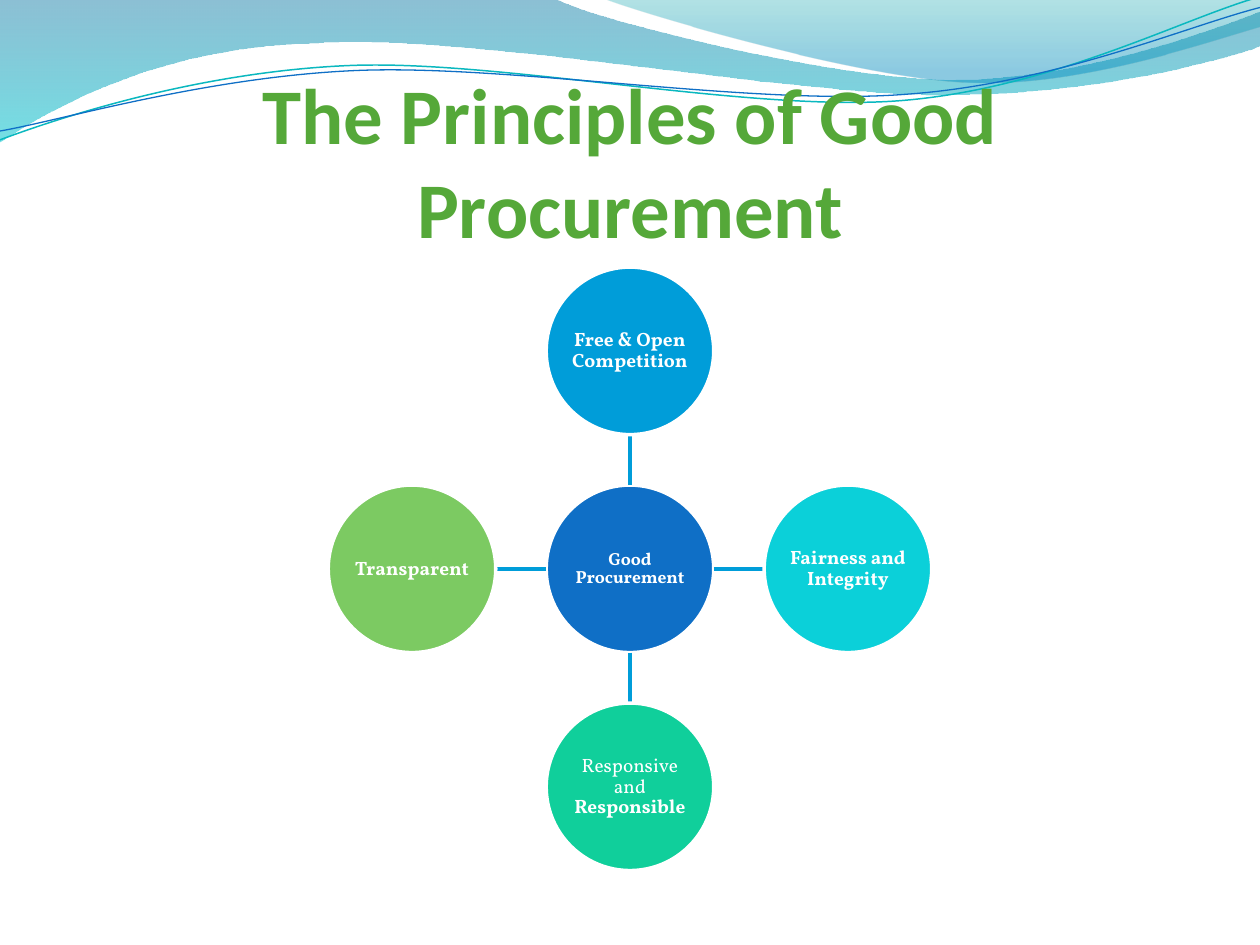
from dataclasses import dataclass
from itertools import islice
from math import cos, radians, sin
from typing import Optional

from lxml.etree import SubElement
from pptx import Presentation
from pptx.dml.color import RGBColor
from pptx.enum.shapes import MSO_CONNECTOR, MSO_SHAPE
from pptx.enum.text import MSO_ANCHOR, PP_ALIGN
from pptx.oxml.ns import qn
from pptx.util import Inches, Pt


@dataclass(frozen=True)
class Theme:
    title: str = "55A839"
    white: str = "FFFFFF"
    hub: str = "0F6FC6"
    spoke: str = "009DD9"
    head: str = "Calibri"
    body: str = "Vollkorn"
    big: float = 45
    small: float = 10
    label: float = 11


@dataclass(frozen=True)
class Stop:
    place: float
    color: str
    alpha: int


@dataclass(frozen=True)
class Wave:
    start: tuple[float, float]
    steps: list[tuple[float, ...]]
    stops: tuple[Stop, ...] = ()
    line: Optional[str] = None
    width: float = 0
    pivot: tuple[float, float] = (0, 0)
    turn: float = 0


@dataclass(frozen=True)
class Run:
    text: str
    bold: bool = True


@dataclass(frozen=True)
class Node:
    dx: int
    dy: int
    color: str
    runs: tuple[Run, ...]
    size: float = Theme.label


THEME = Theme()
SIZE = 1.33
MID = (5, 3.85 + SIZE / 2)
PITCH = 1.73
TILT = -2.7

WAVES = [
    Wave((0, 0), [
        (4.4, -0.01), (4.76, 0.17, 6.64, 0.63, 7.58, 0.63),
        (8.53, 0.63, 9.58, 0.26, 10, 0.09), (10.01, 0.36),
        (9.83, 0.44, 8.7, 0.76, 7.46, 0.75),
        (6.22, 0.75, 3.82, 0.28, 2.57, 0.34),
        (1.29, 0.36, 0.46, 0.83, -0.01, 1.13),
    ], (Stop(0, "0074A1", 45), Stop(1, "00C6CF", 55))),
    Wave((4.79, -0.01), [
        (5.09, 0.11, 6.82, 0.62, 7.69, 0.65),
        (8.56, 0.69, 9.61, 0.32, 10, 0.21), (10, 0),
    ], (Stop(0, "00A1A9", 30), Stop(0.8, "008BBF", 45))),
    Wave((0, 1.11), [
        (0.48, 0.93, 1.58, 0.57, 2.77, 0.52),
        (3.95, 0.47, 5.93, 0.89, 7.13, 0.8),
        (8.33, 0.71, 9.38, 0.15, 9.98, -0.02),
    ], line="0AB8BF", width=0.85, pivot=(4.99, 0.58), turn=TILT),
    Wave((0, 1.04), [
        (0.47, 0.96, 1.64, 0.61, 2.83, 0.56),
        (4.03, 0.51, 5.97, 0.84, 7.17, 0.75),
        (8.36, 0.67, 9.41, 0.21, 10, 0.06),
    ], line="0F6FC6", width=0.75, pivot=(5, 0.59), turn=TILT),
]

NODES = [
    Node(0, 0, THEME.hub, (Run("Good Procurement"),), THEME.small),
    Node(0, -1, "009DD9", (Run("Free & Open Competition"),)),
    Node(1, 0, "0BD0D9", (Run("Fairness and Integrity"),)),
    Node(0, 1, "10CF9B", (Run("Responsive and ", False), Run("Responsible"))),
    Node(-1, 0, "7CCA62", (Run("Transparent"),)),
]


def rgb(code: str) -> RGBColor:
    return RGBColor.from_string(code)


def level(wave: Wave, x: float, y: float) -> tuple[int, int]:
    angle = radians(-wave.turn)
    across, down = x - wave.pivot[0], y - wave.pivot[1]
    return (Inches(wave.pivot[0] + across * cos(angle) - down * sin(angle)),
            Inches(wave.pivot[1] + across * sin(angle) + down * cos(angle)))


def bend(shape, wave: Wave) -> None:
    outline = next(shape.element.iter(qn("a:path")))
    legs = iter(list(outline)[1:])
    for step in wave.steps:
        first, *rest = islice(legs, len(step) // 2)
        if rest:
            first.tag = qn("a:cubicBezTo")
        for leg in rest:
            first.append(leg[0])
            outline.remove(leg)


def add_wave(slide, wave: Wave) -> None:
    spots = [level(wave, *step[at:at + 2])
             for step in wave.steps for at in range(0, len(step), 2)]
    pen = slide.shapes.build_freeform(*level(wave, *wave.start))
    pen.add_line_segments(spots, close=bool(wave.stops))
    shape = pen.convert_to_shape()
    bend(shape, wave)
    shape.rotation = wave.turn
    shape.shadow.inherit = False
    if wave.line:
        shape.fill.background()
        shape.line.color.rgb = rgb(wave.line)
        shape.line.width = Pt(wave.width)
        return
    shape.line.fill.background()
    shape.fill.gradient()
    shape.fill.gradient_angle = 270
    for slot, stop in zip(shape.fill.gradient_stops, wave.stops):
        slot.position = stop.place
        slot.color.rgb = rgb(stop.color)
    tints = shape.element.spPr.find(qn("a:gradFill")).iter(qn("a:srgbClr"))
    for tint, stop in zip(tints, wave.stops):
        SubElement(tint, qn("a:alpha")).set("val", str(stop.alpha * 1000))


def add_run(para, run: Run, face: str, size: float, color: str) -> None:
    part = para.add_run()
    part.text = run.text
    part.font.name = face
    part.font.size = Pt(size)
    part.font.bold = run.bold
    part.font.color.rgb = rgb(color)


def add_title(slide, text: str) -> None:
    box = slide.shapes.add_textbox(
        Inches(0.5), Inches(0.77), Inches(9), Inches(1.25))
    frame = box.text_frame
    frame.word_wrap = True
    frame.vertical_anchor = MSO_ANCHOR.BOTTOM
    frame.margin_left = frame.margin_right = frame.margin_bottom = 0
    frame.margin_top = Inches(0.05)
    para = frame.paragraphs[0]
    para.alignment = PP_ALIGN.CENTER
    add_run(para, Run(text), THEME.head, THEME.big, THEME.title)


def add_spoke(slide, node: Node) -> None:
    ends = [Inches(mid + way * reach)
            for reach in (SIZE / 2, PITCH - SIZE / 2)
            for mid, way in zip(MID, (node.dx, node.dy))]
    link = slide.shapes.add_connector(MSO_CONNECTOR.STRAIGHT, *ends)
    link.line.color.rgb = rgb(THEME.spoke)
    link.line.width = Pt(2)
    SubElement(link.element.spPr, qn("a:effectLst"))


def add_node(slide, node: Node) -> None:
    left = MID[0] + node.dx * PITCH - SIZE / 2
    top = MID[1] + node.dy * PITCH - SIZE / 2
    disc = slide.shapes.add_shape(
        MSO_SHAPE.OVAL, Inches(left), Inches(top), Inches(SIZE), Inches(SIZE))
    disc.shadow.inherit = False
    disc.fill.solid()
    disc.fill.fore_color.rgb = rgb(node.color)
    disc.line.color.rgb = rgb(THEME.white)
    disc.line.width = Pt(2)
    frame = disc.text_frame
    frame.word_wrap = True
    frame.vertical_anchor = MSO_ANCHOR.MIDDLE
    frame.margin_left = frame.margin_right = Inches(0.01)
    frame.margin_top = frame.margin_bottom = Inches(0.01)
    para = frame.paragraphs[0]
    para.alignment = PP_ALIGN.CENTER
    para.line_spacing = 0.9
    for run in node.runs:
        add_run(para, run, THEME.body, node.size, THEME.white)


def main() -> None:
    deck = Presentation()
    deck.slide_width, deck.slide_height = Inches(10), Inches(7.5)
    slide = deck.slides.add_slide(deck.slide_layouts[6])
    for wave in WAVES:
        add_wave(slide, wave)
    add_title(slide, "The Principles of Good Procurement")
    for node in NODES:
        if node.dx or node.dy:
            add_spoke(slide, node)
        add_node(slide, node)
    deck.save("out.pptx")


if __name__ == "__main__":
    main()
